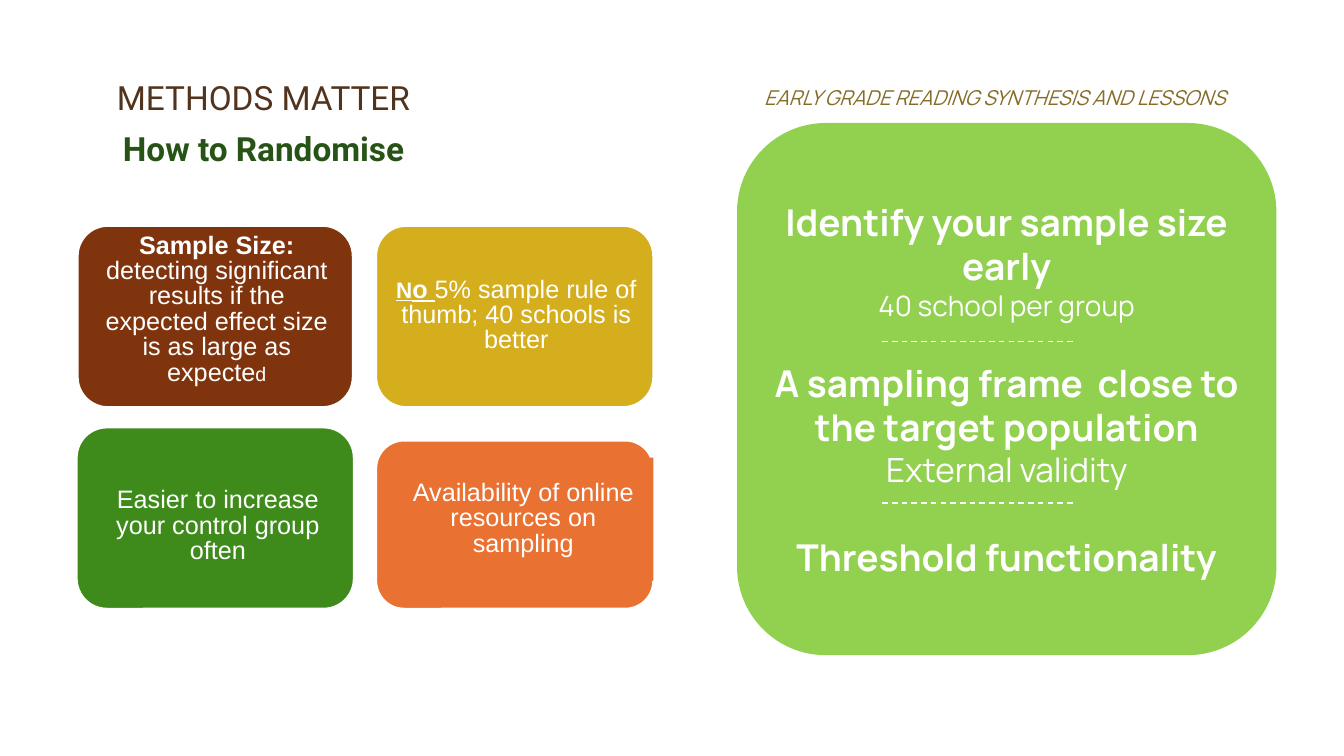
"""Build the slide on sample size and how to randomise."""
import dataclasses

import lxml.etree
import pptx
import pptx.dml.color
import pptx.enum.dml
import pptx.enum.shapes
import pptx.enum.text
import pptx.oxml.ns
import pptx.util

Inches = pptx.util.Inches
Pt = pptx.util.Pt
ALIGN = pptx.enum.text.PP_ALIGN
ANCHOR = pptx.enum.text.MSO_ANCHOR
SHAPE = pptx.enum.shapes.MSO_SHAPE
FIT = pptx.enum.text.MSO_AUTO_SIZE.SHAPE_TO_FIT_TEXT


@dataclasses.dataclass(frozen=True)
class Theme:
    white: str = "FFFFFF"
    title: str = "52331D"
    heading: str = "275316"
    tagline: str = "856C27"
    panel: str = "92D050"
    brown: str = "7F340D"
    gold: str = "D5AE1D"
    green: str = "3E8B1B"
    orange: str = "E97132"
    title_font: str = "Roboto"
    panel_font: str = "Manrope"
    card_font: str = "Arial"
    title_size: float = 23.8
    tagline_size: float = 14.6
    panel_size: float = 26.4
    note_size: float = 20
    card_size: float = 18


def rgb(color):
    return pptx.dml.color.RGBColor.from_string(color)


def write(tf, paragraphs, *, font, size, color, bold=False, italic=False,
          align=ALIGN.LEFT, spacing=1.0, anchor=ANCHOR.MIDDLE,
          insets=(0.1, 0.05, 0.1, 0.05), fit=None):
    tf.word_wrap = True
    tf.vertical_anchor = anchor
    if fit is not None:
        tf.auto_size = fit
    tf.margin_left, tf.margin_top, tf.margin_right, tf.margin_bottom = map(Inches, insets)
    for i, (gap, runs) in enumerate(paragraphs):
        p = tf.paragraphs[0] if i == 0 else tf.add_paragraph()
        p.alignment = align
        p.line_spacing = spacing
        p.space_before = Pt(gap)
        for text, style in runs:
            r = p.add_run()
            r.text = text
            r.font.name = font
            r.font.size = Pt(style.get("size", size))
            r.font.bold = style.get("bold", bold)
            r.font.italic = italic
            r.font.underline = style.get("underline", False)
            r.font.color.rgb = rgb(color)


def line(text, gap=0, **style):
    return gap, [(text, style)]


class SlideBuilder:
    def __init__(self, prs, theme):
        self.theme = theme
        self.s = prs.slides.add_slide(prs.slide_layouts[5])

    def title(self, box, text, **fmt):
        sp = self.s.shapes.title
        sp.left, sp.top, sp.width, sp.height = map(Inches, box)
        write(sp.text_frame, [line(text)], **fmt)

    def text(self, box, paragraphs, **fmt):
        sp = self.s.shapes.add_textbox(*map(Inches, box))
        write(sp.text_frame, paragraphs, **fmt)
        return sp

    def panel(self, box, fill, outline=None):
        sp = self.s.shapes.add_shape(SHAPE.ROUNDED_RECTANGLE, *map(Inches, box))
        sp.shadow.inherit = False
        sp.fill.solid()
        sp.fill.fore_color.rgb = rgb(fill)
        if outline:
            sp.line.color.rgb = rgb(outline)
            sp.line.width = Pt(1.5)
        else:
            sp.line.fill.background()
        return sp

    def card(self, box, label_box, fill, runs, anchor=ANCHOR.MIDDLE):
        t = self.theme
        self.panel(box, fill, t.white)
        return self.text(label_box, [(0, runs)], font=t.card_font, size=t.card_size,
                         color=t.white, align=ALIGN.CENTER, spacing=0.84,
                         anchor=anchor, insets=(0.12, 0, 0.08, 0))

    def divider(self, left, right, y):
        c = self.s.shapes.add_connector(pptx.enum.shapes.MSO_CONNECTOR.STRAIGHT,
                                        Inches(left), Inches(y), Inches(right), Inches(y))
        c.line.color.rgb = rgb(self.theme.white)
        c.line.width = Pt(1)
        c.line.dash_style = pptx.enum.dml.MSO_LINE.DASH
        lxml.etree.SubElement(c.element.spPr, pptx.oxml.ns.qn("a:effectLst"))


def main():
    prs = pptx.Presentation()
    prs.slide_width, prs.slide_height = Inches(13.33), Inches(7.5)
    t = Theme()
    b = SlideBuilder(prs, t)

    b.title((1.06, 0.76, 11.24, 0.46), "METHODS MATTER", font=t.title_font,
            size=t.title_size, color=t.title, spacing=0.9, anchor=ANCHOR.BOTTOM, fit=FIT)

    lessons = b.panel((7.31, 1.22, 5.35, 5.28), t.panel)
    write(lessons.text_frame, [
        line("Identify your sample size early", bold=True),
        line("40 school per group", size=t.note_size),
        line("A sampling frame  close to the target population", gap=27.3, bold=True),
        line("External validity", size=t.title_size),
        line("Threshold functionality", gap=32.5, bold=True),
    ], font=t.panel_font, size=t.panel_size, color=t.white, align=ALIGN.CENTER)
    for y in (3.39, 4.99):
        b.divider(8.75, 10.66, y)

    b.text((1.04, 1.21, 4.03, 0.51), [line("How to Randomise")], font=t.title_font,
           size=t.title_size, color=t.heading, bold=True, insets=(0.18,) * 4)
    b.text((1.05, 0.81, 11.24, 0.35), [line("EARLY GRADE READING SYNTHESIS AND LESSONS")],
           font=t.panel_font, size=t.tagline_size, color=t.tagline, italic=True,
           align=ALIGN.RIGHT, spacing=0.9, anchor=ANCHOR.BOTTOM,
           insets=(0.13, 0.07, 0.13, 0.07), fit=FIT)

    b.card((0.77, 2.24, 2.73, 1.8), (0.83, 2.32, 2.6, 1.63), t.brown, [
        ("Sample Size:", {"bold": True}),
        (" detecting significant results if the expected effect size is as large as expecte", {}),
        ("d", {"size": 14}),
    ], anchor=ANCHOR.TOP)
    b.card((3.73, 2.24, 2.75, 1.8), (3.79, 2.32, 2.62, 1.63), t.gold, [
        ("N", {"size": 16, "bold": True, "underline": True}),
        ("o ", {"bold": True, "underline": True}),
        ("5% sample rule of thumb; 40 schools is better", {}),
    ])
    b.card((0.76, 4.24, 2.75, 1.8), (0.83, 4.41, 2.62, 1.63), t.green,
           [("Easier to increase your control group often", {})])
    label = b.card((3.73, 4.37, 2.75, 1.67), (3.86, 4.54, 2.62, 1.22), t.orange,
                   [("Availability of online resources on sampling", {})])
    label.fill.solid()
    label.fill.fore_color.rgb = rgb(t.orange)

    prs.save("out.pptx")


if __name__ == "__main__":
    main()
